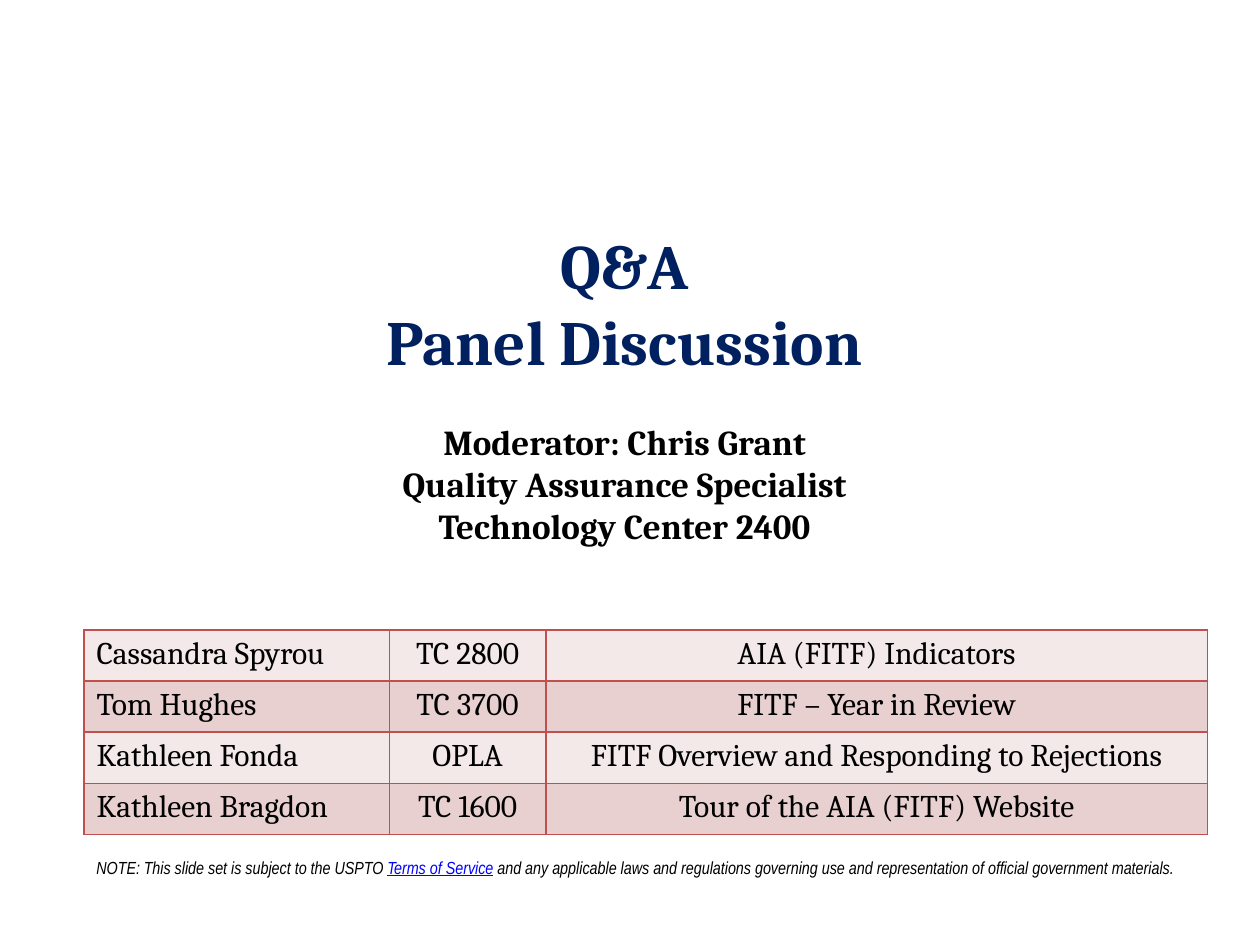
from typing import NamedTuple

from lxml import etree
from pptx import Presentation
from pptx import util as u
from pptx.dml.color import RGBColor
from pptx.enum import text
from pptx.oxml import ns

NAVY = RGBColor(0x00, 0x20, 0x60)
BLACK = RGBColor(0x00, 0x00, 0x00)
LINK_BLUE = RGBColor(0x00, 0x00, 0xFF)
BORDER_RED = RGBColor(0xC0, 0x50, 0x4D)
BANDS = (RGBColor(0xF4, 0xE9, 0xE9), RGBColor(0xE8, 0xD0, 0xD0))
SERIF = "Cambria"
NARROW = "Arial Narrow"

LEFT = u.Pt(48)
COLUMN_WIDTHS = (u.Pt(174.5), u.Pt(89.5), u.Pt(378))
ROW_HEIGHT = u.Pt(29.2)


class Panelist(NamedTuple):
    name: str
    office: str
    topic: str


class HeadingLine(NamedTuple):
    words: str
    size: int
    color: RGBColor
    space_before: int = 0


HEADING = (
    HeadingLine("Q&A", 36, NAVY),
    HeadingLine("Panel Discussion", 36, NAVY),
    HeadingLine("Moderator: Chris Grant", 20, BLACK, 24),
    HeadingLine("Quality Assurance Specialist", 20, BLACK),
    HeadingLine("Technology Center 2400", 20, BLACK),
)
PANELISTS = (
    Panelist("Cassandra Spyrou", "TC 2800", "AIA (FITF) Indicators"),
    Panelist("Tom Hughes", "TC 3700", "FITF – Year in Review"),
    Panelist("Kathleen Fonda", "OPLA", "FITF Overview and Responding to Rejections"),
    Panelist("Kathleen Bragdon", "TC 1600", "Tour of the AIA (FITF) Website"),
)
NOTE_PARTS = (
    ("NOTE: This slide set is subject to the USPTO ", False),
    ("Terms of Service", True),
    (" and any applicable laws and regulations governing use and "
     "representation of official government materials.", False),
)


def add_heading(slide) -> None:
    title = slide.shapes.title
    title.left, title.top = u.Pt(102), u.Pt(126)
    title.width, title.height = u.Pt(510), u.Pt(191.5)
    frame = title.text_frame
    frame.auto_size = text.MSO_AUTO_SIZE.SHAPE_TO_FIT_TEXT
    frame.vertical_anchor = text.MSO_ANCHOR.TOP
    frame.text = "\n".join(line.words for line in HEADING)
    for paragraph, line in zip(frame.paragraphs, HEADING):
        paragraph.alignment = text.PP_ALIGN.CENTER
        paragraph.space_before = u.Pt(line.space_before)
        paragraph.font.name = SERIF
        paragraph.font.size = u.Pt(line.size)
        paragraph.font.bold = True
        paragraph.font.color.rgb = line.color


def set_borders(cell, color: RGBColor, width: int) -> None:
    properties = cell._tc.get_or_add_tcPr()
    for position, side in enumerate(("a:lnL", "a:lnR", "a:lnT", "a:lnB")):
        line = etree.Element(ns.qn(side), w=str(width))
        fill = etree.SubElement(line, ns.qn("a:solidFill"))
        etree.SubElement(fill, ns.qn("a:srgbClr"), val=str(color))
        properties.insert(position, line)


def add_panel_table(slide) -> None:
    frame = slide.shapes.add_table(
        len(PANELISTS), len(COLUMN_WIDTHS), LEFT, u.Pt(360),
        sum(COLUMN_WIDTHS), ROW_HEIGHT * len(PANELISTS))
    table = frame.table
    table.first_row = table.horz_banding = False
    for column, width in zip(table.columns, COLUMN_WIDTHS):
        column.width = width
    for row_index, panelist in enumerate(PANELISTS):
        table.rows[row_index].height = ROW_HEIGHT
        for column_index, words in enumerate(panelist):
            cell = table.cell(row_index, column_index)
            cell.text = words
            cell.fill.solid()
            cell.fill.fore_color.rgb = BANDS[row_index % 2]
            set_borders(cell, BORDER_RED, u.Pt(1))
            paragraph = cell.text_frame.paragraphs[0]
            if column_index > 0:
                paragraph.alignment = text.PP_ALIGN.CENTER
            paragraph.font.name = SERIF
            paragraph.font.size = u.Pt(18)
            paragraph.font.color.rgb = BLACK


def add_note(slide) -> None:
    box = slide.shapes.add_textbox(LEFT, u.Pt(486), u.Pt(641), u.Pt(19.4))
    frame = box.text_frame
    frame.word_wrap = False
    frame.auto_size = text.MSO_AUTO_SIZE.SHAPE_TO_FIT_TEXT
    paragraph = frame.paragraphs[0]
    paragraph.font.name = NARROW
    paragraph.font.size = u.Pt(10)
    paragraph.font.italic = True
    for words, is_link in NOTE_PARTS:
        run = paragraph.add_run()
        run.text = words
        run.font.underline = is_link
        run.font.color.rgb = LINK_BLUE if is_link else BLACK


def main() -> None:
    presentation = Presentation()
    presentation.slide_width, presentation.slide_height = u.Pt(720), u.Pt(540)
    # Title-only layout
    slide = presentation.slides.add_slide(presentation.slide_layouts[5])
    add_heading(slide)
    add_panel_table(slide)
    add_note(slide)
    presentation.save("out.pptx")


if __name__ == "__main__":
    main()
